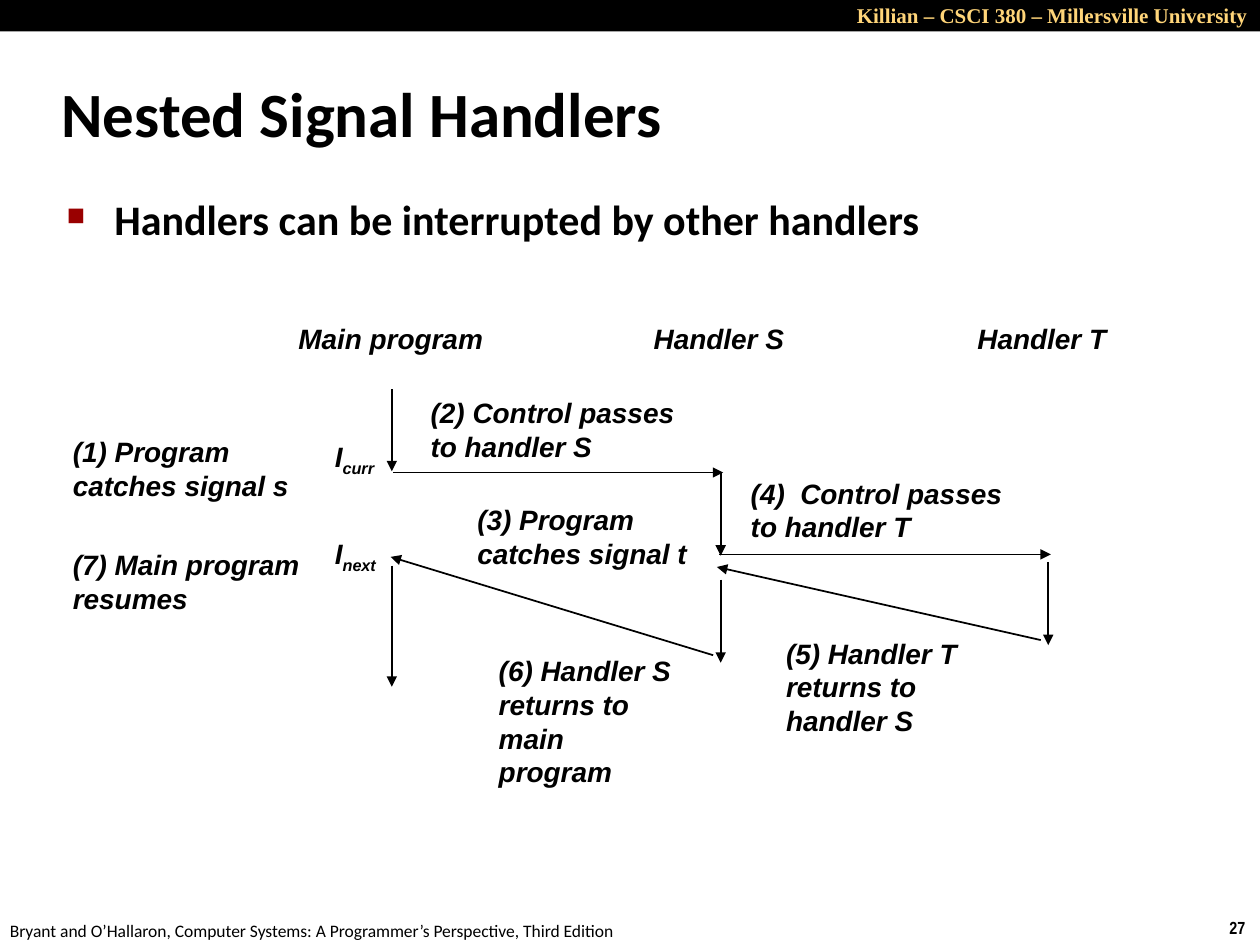
"""Build the slide on nested signal handlers with its control-flow diagram."""
from lxml.etree import SubElement
from pptx import Presentation
from pptx.dml.color import RGBColor
from pptx.enum.shapes import MSO_CONNECTOR, MSO_SHAPE
from pptx.enum.text import MSO_ANCHOR, PP_ALIGN
from pptx.oxml.ns import qn
from pptx.util import Pt

PX = 9144
WIDTH, HEIGHT = 1000, 750

THEME = {
    "black": RGBColor.from_string("000000"),
    "bullet": "990000",
    "line": 1,
    "header": dict(font="Times New Roman", size=12, bold=True, color="FFD579", align=PP_ALIGN.RIGHT),
    "number": dict(font="Arial Narrow", size=10, bold=True, wrap=False),
    "footer": dict(font="Calibri", size=10, wrap=False),
    "title": dict(font="Calibri", size=36, bold=True, anchor=MSO_ANCHOR.MIDDLE),
    "body": dict(font="Calibri", size=24, bold=True),
    "label": dict(font="Arial", size=16, bold=True, italic=True),
    "state": dict(font="Arial", size=16, bold=True, italic=True, wrap=False),
}

FRAME = [
    ("header", "Killian – CSCI 380 – Millersville University", (658, -3, 342, 30)),
    ("number", "27", (966, 723, 34, 27)),
    ("footer", "Bryant and O’Hallaron, Computer Systems: A Programmer’s Perspective, Third Edition",
     (-2, 725, 508, 27)),
    ("title", "Nested Signal Handlers", (39, 48, 830, 83)),
]
POINT = ("Handlers can be interrupted by other handlers", (43, 149, 864, 68))

MAIN, HANDLER_S, HANDLER_T = 311, 572, 832
COLUMNS = [("Main program", 227, 174), ("Handler S", 509, 134), ("Handler T", 766, 134)]
COLUMN_TOP, ROW = 250, 37
STATES = [("I", "curr", 344), ("I", "next", 421)]
STATE_LEFT, STATE_WIDTH = 256, 60

STEPS = [
    ("(1) Program catches signal s", (48, 340, 210, 64)),
    ("(2) Control passes to handler S", (332, 309, 224, 64)),
    ("(3) Program catches signal t", (369, 394, 203, 64)),
    ("(4)  Control passes to handler T", (586, 373, 231, 64)),
    ("(5) Handler T\nreturns to handler S", (614, 500, 162, 91)),
    ("(6) Handler S\nreturns to main program", (386, 514, 162, 118)),
    ("(7) Main program resumes", (48, 430, 210, 64)),
]

RUNNING = [(MAIN, 309, 374), (MAIN, 449, 545), (HANDLER_S, 375, 441),
           (HANDLER_S, 460, 526), (HANDLER_T, 446, 512)]
TRANSFERS = [
    (MAIN + 1, 375, HANDLER_S + 2, 375),
    (HANDLER_S - 1, 440, HANDLER_T + 2, 440),
    (HANDLER_T - 6, 508, HANDLER_S - 3, 450),
    (HANDLER_S - 6, 520, MAIN - 1, 442),
]


def emu(lengths):
    return [n * PX for n in lengths]


def style_run(r, style):
    r.font.name = style["font"]
    r.font.size = Pt(style["size"])
    r.font.bold = style.get("bold", False)
    r.font.italic = style.get("italic", False)
    r.font.color.rgb = RGBColor.from_string(style.get("color", "000000"))


def add_text(s, kind, text, box):
    style = THEME[kind]
    tf = s.shapes.add_textbox(*emu(box)).text_frame
    tf.word_wrap = style.get("wrap", True)
    tf.vertical_anchor = style.get("anchor", MSO_ANCHOR.TOP)
    tf.text = text
    for p in tf.paragraphs:
        p.alignment = style.get("align", PP_ALIGN.LEFT)
        for r in p.runs:
            style_run(r, style)
    return tf.paragraphs[0]


def add_bullet(p):
    p.space_before = Pt(5)
    pPr = p._p.get_or_add_pPr()
    pPr.set("marL", str(38 * PX))
    pPr.set("indent", str(-38 * PX))
    color = SubElement(pPr, qn("a:buClr"))
    SubElement(color, qn("a:srgbClr"), val=THEME["bullet"])
    SubElement(pPr, qn("a:buSzPct"), val="60000")
    SubElement(pPr, qn("a:buChar"), char="■")


def add_state(s, name, subscript, top):
    p = add_text(s, "state", name, (STATE_LEFT, top, STATE_WIDTH, ROW))
    r = p.add_run()
    r.text = subscript
    style_run(r, THEME["state"])
    r.font._element.set("baseline", "-25000")


def add_arrow(s, *ends):
    line = s.shapes.add_connector(MSO_CONNECTOR.STRAIGHT, *emu(ends))
    line.line.color.rgb = THEME["black"]
    line.line.width = Pt(THEME["line"])
    SubElement(line.line._get_or_add_ln(), qn("a:tailEnd"), type="triangle")
    SubElement(line._element.spPr, qn("a:effectLst"))


def main():
    prs = Presentation()
    prs.slide_width, prs.slide_height = emu((WIDTH, HEIGHT))
    s = prs.slides.add_slide(prs.slide_layouts[6])

    band = s.shapes.add_shape(MSO_SHAPE.RECTANGLE, *emu((0, 0, WIDTH, 25)))
    band.shadow.inherit = False
    band.fill.solid()
    band.fill.fore_color.rgb = THEME["black"]
    band.line.fill.background()

    for kind, text, box in FRAME:
        add_text(s, kind, text, box)
    add_bullet(add_text(s, "body", *POINT))

    for text, left, width in COLUMNS:
        add_text(s, "label", text, (left, COLUMN_TOP, width, ROW))
    for state in STATES:
        add_state(s, *state)
    for text, box in STEPS:
        add_text(s, "label", text, box)

    for x, top, bottom in RUNNING:
        add_arrow(s, x, top, x, bottom)
    for ends in TRANSFERS:
        add_arrow(s, *ends)

    prs.save("out.pptx")


if __name__ == "__main__":
    main()
